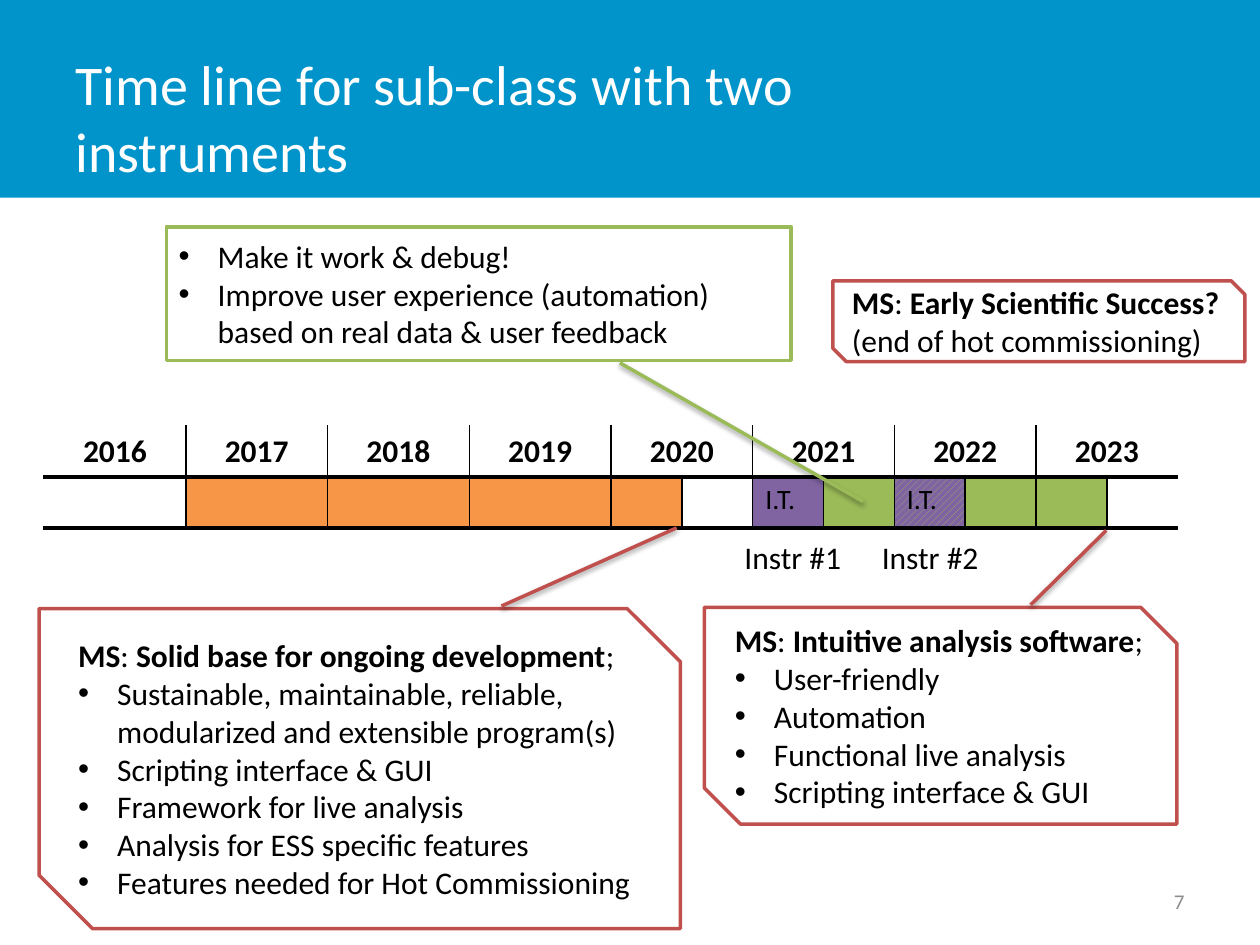
from dataclasses import dataclass

import pptx
import pptx.dml.color
import pptx.enum.dml
import pptx.enum.shapes
import pptx.enum.text
import pptx.oxml
import pptx.oxml.ns
import pptx.util
from pptx.util import Inches, Pt

Shape = pptx.enum.shapes.MSO_SHAPE
Align = pptx.enum.text.PP_ALIGN
Anchor = pptx.enum.text.MSO_ANCHOR

FONT = "Calibri"
BLACK, WHITE, GREY, BLUE = "000000", "FFFFFF", "8C8C8C", "0094CA"
ORANGE, PURPLE, GREEN, RED = "F79646", "8064A2", "9BBB59", "C0504D"
NS = pptx.oxml.ns.nsdecls("a")


@dataclass(frozen=True)
class Line:
    """One paragraph; text between * signs is bold."""
    text: str
    bullet: bool = False


@dataclass(frozen=True)
class Callout:
    preset: int
    box: tuple
    color: str
    lines: tuple


@dataclass(frozen=True)
class Pointer:
    start: tuple
    end: tuple
    color: str


@dataclass(frozen=True)
class Phase:
    color: str
    label: str = ""
    hatched: bool = False


def bullets(*texts: str) -> tuple:
    return tuple(Line(text, True) for text in texts)


CALLOUTS = (
    Callout(Shape.FLOWCHART_PROCESS, (1.32, 1.8, 4.96, 1.06), GREEN, bullets(
        "Make it work & debug!",
        "Improve user experience (automation) based on real data & user feedback")),
    Callout(Shape.SNIP_2_DIAG_RECTANGLE, (0.31, 4.83, 5.09, 2.54), RED, (
        Line("*MS*: *Solid base for ongoing development*;"),
        *bullets("Sustainable, maintainable, reliable, modularized and extensible program(s)",
                 "Scripting interface & GUI",
                 "Framework for live analysis",
                 "Analysis for ESS specific features",
                 "Features needed for Hot Commissioning"))),
    Callout(Shape.SNIP_2_DIAG_RECTANGLE, (5.59, 4.82, 3.75, 1.72), RED, (
        Line("*MS*: *Intuitive analysis software*;"),
        *bullets("User-friendly", "Automation", "Functional live analysis",
                 "Scripting interface & GUI"))),
    Callout(Shape.SNIP_2_DIAG_RECTANGLE, (6.61, 2.23, 3.27, 0.64), RED, (
        Line("*MS*: *Early Scientific Success?*"),
        Line("(end of hot commissioning)"))),
)
POINTERS = (
    Pointer((5.37, 4.19), (3.98, 4.81), RED),
    Pointer((8.78, 4.21), (8.18, 4.8), RED),
    Pointer((4.92, 2.88), (6.85, 3.98), GREEN),
)
YEARS = range(2016, 2024)
WHOLE_YEARS = 4  # the later years are split into two half-year columns
PHASES = (
    Phase(WHITE), Phase(ORANGE), Phase(ORANGE), Phase(ORANGE),
    Phase(ORANGE), Phase(WHITE), Phase(PURPLE, "I.T."), Phase(GREEN),
    Phase(PURPLE, "I.T.", hatched=True), Phase(GREEN), Phase(GREEN), Phase(WHITE),
)


def rgb(color: str) -> pptx.dml.color.RGBColor:
    return pptx.dml.color.RGBColor.from_string(color)


def paint(fill, color: str) -> None:
    fill.solid()
    fill.fore_color.rgb = rgb(color)


def style(font, size: float, color: str = BLACK, bold: bool = False) -> None:
    font.name, font.size, font.bold = FONT, Pt(size), bold
    font.color.rgb = rgb(color)


def write_lines(frame, lines: tuple) -> None:
    for index, line in enumerate(lines):
        paragraph = frame.paragraphs[0] if index == 0 else frame.add_paragraph()
        paragraph.alignment = Align.LEFT
        if line.bullet:
            properties = paragraph._p.get_or_add_pPr()
            properties.set("marL", str(Inches(0.31)))
            properties.set("indent", str(-Inches(0.31)))
            properties.append(pptx.oxml.parse_xml(f'<a:buFont {NS} typeface="Arial"/>'))
            properties.append(pptx.oxml.parse_xml(f'<a:buChar {NS} char="•"/>'))
        for part, text in enumerate(line.text.split("*")):
            if text:
                run = paragraph.add_run()
                run.text = text
                style(run.font, 18, bold=part % 2 == 1)


def add_label(slide, box: tuple, text: str, size: float, color: str = BLACK,
              align=Align.LEFT, anchor=Anchor.MIDDLE, wrap: bool = True) -> None:
    frame = slide.shapes.add_textbox(*map(Inches, box)).text_frame
    frame.text = text
    frame.word_wrap = wrap
    frame.vertical_anchor = anchor
    frame.paragraphs[0].alignment = align
    style(frame.paragraphs[0].runs[0].font, size, color)


def add_banner(slide) -> None:
    banner = slide.shapes.add_shape(Shape.RECTANGLE, 0, 0, Inches(10), Inches(1.57))
    banner.shadow.inherit = False
    paint(banner.fill, BLUE)
    banner.line.fill.background()


def add_callout(slide, callout: Callout) -> None:
    shape = slide.shapes.add_shape(callout.preset, *map(Inches, callout.box))
    shape.shadow.inherit = False
    paint(shape.fill, WHITE)
    shape.line.color.rgb = rgb(callout.color)
    shape.line.width = Pt(2)
    shape.text_frame.word_wrap = True
    shape.text_frame.vertical_anchor = Anchor.MIDDLE
    write_lines(shape.text_frame, callout.lines)


def add_pointer(slide, pointer: Pointer) -> None:
    connector = slide.shapes.add_connector(
        pptx.enum.shapes.MSO_CONNECTOR.STRAIGHT,
        *map(Inches, pointer.start + pointer.end))
    connector.line.color.rgb = rgb(pointer.color)
    connector.line.width = Pt(2)
    connector._element.spPr.append(pptx.oxml.parse_xml(
        f'<a:effectLst {NS}><a:outerShdw blurRad="{Pt(3.1)}" dist="{Pt(1.6)}" dir="5400000" '
        f'rotWithShape="0"><a:srgbClr val="{BLACK}"><a:alpha val="38000"/></a:srgbClr>'
        '</a:outerShdw></a:effectLst>'))


def set_borders(cell, **sides: tuple) -> None:
    """Each side (L, R, T, B, in this order) is a colour and a width in points."""
    properties = cell._tc.get_or_add_tcPr()
    for side, (color, width) in sides.items():
        properties.append(pptx.oxml.parse_xml(
            f'<a:ln{side} {NS} w="{Pt(width)}"><a:solidFill><a:srgbClr val="{color}"/>'
            f'</a:solidFill></a:ln{side}>'))


def fill_cell(cell, text: str, size: float, bold: bool, align) -> None:
    cell.text = text
    paragraph = cell.text_frame.paragraphs[0]
    paragraph.alignment = align
    for run in paragraph.runs:
        style(run.font, size, bold=bold)


def add_timeline(slide) -> None:
    count = len(PHASES)
    table = slide.shapes.add_table(
        2, count, Inches(0.35), Inches(3.38), Inches(9), Inches(0.81)).table
    table.first_row = table.horz_banding = False
    year_width = 9 / len(YEARS)
    for column in range(count):
        share = 1 if column < WHOLE_YEARS else 0.5
        table.columns[column].width = Inches(year_width * share)

    thin, thick, hidden = (BLACK, 1), (BLACK, 3), (WHITE, 1)
    for index, year in enumerate(YEARS):
        first = index if index < WHOLE_YEARS else 2 * index - WHOLE_YEARS
        last = first if index < WHOLE_YEARS else first + 1
        for column in range(first, last + 1):
            cell = table.cell(0, column)
            set_borders(cell, L=thin if index else hidden,
                        R=hidden if last == count - 1 else thin, T=hidden, B=thick)
            paint(cell.fill, WHITE)
        if last > first:
            table.cell(0, first).merge(table.cell(0, last))
        fill_cell(table.cell(0, first), str(year), 18, True, Align.CENTER)

    for column, phase in enumerate(PHASES):
        cell = table.cell(1, column)
        set_borders(cell, L=thin if column else hidden,
                    R=hidden if column == count - 1 else thin, T=thick, B=thick)
        if phase.hatched:
            cell.fill.patterned()
            cell.fill.pattern = pptx.enum.dml.MSO_PATTERN.WIDE_UPWARD_DIAGONAL
            cell.fill.fore_color.rgb = rgb(GREEN)
            cell.fill.back_color.rgb = rgb(phase.color)
        else:
            paint(cell.fill, phase.color)
        fill_cell(cell, phase.label, 16, False, Align.LEFT)


def main() -> None:
    deck = pptx.Presentation()
    deck.slide_width, deck.slide_height = Inches(10), Inches(7.5)
    slide = deck.slides.add_slide(deck.slide_layouts[6])
    add_banner(slide)
    add_label(slide, (0.5, 0.3, 7.81, 1.25), "Time line for sub-class with two instruments",
              32, WHITE)
    add_timeline(slide)
    add_label(slide, (7.17, 6.95, 2.33, 0.4), "7", 12, GREY, Align.RIGHT)
    for callout in CALLOUTS:
        add_callout(slide, callout)
    for pointer in POINTERS:
        add_pointer(slide, pointer)
    for left, instrument in ((5.81, "Instr #1"), (6.9, "Instr #2")):
        add_label(slide, (left, 4.22, 0.98, 0.4), instrument, 18,
                  anchor=Anchor.TOP, wrap=False)
    deck.save("out.pptx")


if __name__ == "__main__":
    main()
